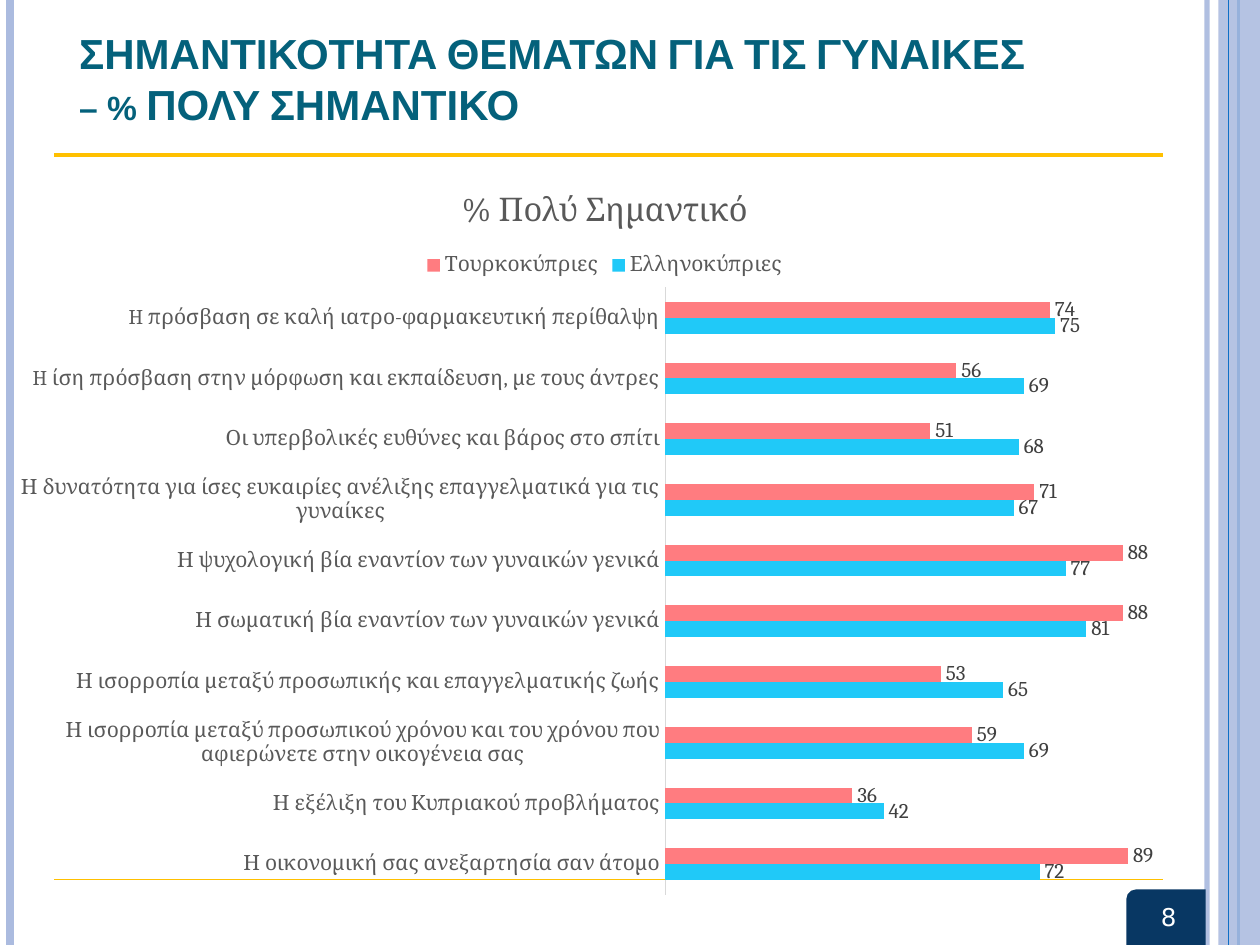
import pptx
import pptx.chart.data
import pptx.dml.color
import pptx.enum.chart
import pptx.enum.shapes
import pptx.enum.text
import pptx.oxml
import pptx.oxml.ns
import pptx.util
from lxml import etree

Inches = pptx.util.Inches
Pt = pptx.util.Pt
qn = pptx.oxml.ns.qn
SHAPES = pptx.enum.shapes.MSO_SHAPE
ANCHOR = pptx.enum.text.MSO_ANCHOR
ALIGN = pptx.enum.text.PP_ALIGN

PALE, BLUE, NAVY, GOLD = "ABBBDF", "0F6FC6", "083763", "FFC000"
TEAL, GREY, DARK, WHITE = "04617B", "595959", "404040", "FFFFFF"

ISSUES = [
    ("Η οικονομική σας ανεξαρτησία σαν άτομο", 72, 89),
    ("Η εξέλιξη του Κυπριακού προβλήματος", 42, 36),
    ("Η ισορροπία μεταξύ προσωπικού χρόνου και του χρόνου που αφιερώνετε στην οικογένεια σας", 69, 59),
    ("Η ισορροπία μεταξύ προσωπικής και επαγγελματικής ζωής", 65, 53),
    ("Η σωματική βία εναντίον των γυναικών γενικά", 81, 88),
    ("Η ψυχολογική βία εναντίον των γυναικών γενικά", 77, 88),
    ("Η δυνατότητα για ίσες ευκαιρίες ανέλιξης επαγγελματικά για τις γυναίκες", 67, 71),
    ("Οι υπερβολικές ευθύνες και βάρος στο σπίτι", 68, 51),
    ("H ίση πρόσβαση στην μόρφωση και εκπαίδευση, με τους άντρες", 69, 56),
    ("H πρόσβαση σε καλή ιατρο-φαρμακευτική περίθαλψη", 75, 74),
]
GROUPS = [("Ελληνοκύπριες", "20C9F8"), ("Τουρκοκύπριες", "FF7C80")]


def rgb(hex_code):
    return pptx.dml.color.RGBColor.from_string(hex_code)


def set_opacity(element, percent):
    colour = next(element.iter(qn("a:srgbClr")))
    etree.SubElement(colour, qn("a:alpha")).set("val", str(percent * 1000))


def style_font(font, size, colour, face="Cambria", bold=False):
    font.size = Pt(size)
    font.name = face
    font.bold = bold
    font.color.rgb = rgb(colour)


class SlideBuilder:
    def __init__(self, slide):
        self.slide = slide
        self.shapes = slide.shapes

    def line(self, x1, y1, x2, y2, colour, width, opacity=None):
        rule = self.shapes.add_connector(
            pptx.enum.shapes.MSO_CONNECTOR.STRAIGHT,
            Inches(x1), Inches(y1), Inches(x2), Inches(y2))
        rule.line.color.rgb = rgb(colour)
        rule.line.width = Pt(width)
        properties = rule._element.spPr
        if opacity:
            set_opacity(properties, opacity)
        etree.SubElement(properties, qn("a:effectLst"))

    def block(self, kind, box, colour, opacity=None, flip=False):
        panel = self.shapes.add_shape(kind, *map(Inches, box))
        panel.shadow.inherit = False
        panel.fill.solid()
        panel.fill.fore_color.rgb = rgb(colour)
        panel.line.fill.background()
        properties = panel._element.spPr
        if opacity:
            set_opacity(properties, opacity)
        if flip:
            properties.find(qn("a:xfrm")).set("flipH", "1")

    def text(self, box, lines, size, colour, face, anchor, align=ALIGN.LEFT,
             bold=False, small_caps=False):
        frame = self.shapes.add_textbox(*map(Inches, box)).text_frame
        frame.word_wrap = True
        frame.vertical_anchor = anchor
        paragraph = frame.paragraphs[0]
        paragraph.alignment = align
        for index, wording in enumerate(lines):
            if index:
                paragraph.add_line_break()
            run = paragraph.add_run()
            run.text = wording
            style_font(run.font, size, colour, face, bold)
            if small_caps:
                run.font._element.set("cap", "small")

    def bar_chart(self, box, heading, rows, groups, plot_layout):
        figures = pptx.chart.data.CategoryChartData(number_format="0")
        figures.categories = [row[0] for row in rows]
        for column, (name, _) in enumerate(groups, 1):
            figures.add_series(name, [row[column] for row in rows])
        chart = self.shapes.add_chart(
            pptx.enum.chart.XL_CHART_TYPE.BAR_CLUSTERED,
            *map(Inches, box), figures).chart
        style_font(chart.font, 10, "000000")

        title = chart.chart_title
        run = title.text_frame.paragraphs[0].add_run()
        run.text = heading
        style_font(run.font, 18.6, GREY)
        title.include_in_layout = False

        chart.has_legend = True
        chart.legend.position = pptx.enum.chart.XL_LEGEND_POSITION.TOP
        chart.legend.include_in_layout = False
        style_font(chart.legend.font, 12, GREY)

        issues = chart.category_axis
        issues.major_tick_mark = pptx.enum.chart.XL_TICK_MARK.NONE
        issues.format.line.color.rgb = rgb("D9D9D9")
        issues.format.line.width = Pt(0.75)
        style_font(issues.tick_labels.font, 12, GREY)

        percent = chart.value_axis
        percent.minimum_scale, percent.maximum_scale = 0, 100
        percent.has_major_gridlines = False
        percent.visible = False

        plot = chart.plots[0]
        plot.gap_width = 182
        plot.overlap = 0
        plot.vary_by_categories = False
        for series, (_, colour) in zip(plot.series, groups):
            series.format.fill.solid()
            series.format.fill.fore_color.rgb = rgb(colour)
            labels = series.data_labels
            labels.show_value = True
            labels.number_format = "0"
            labels.number_format_is_linked = False
            labels.position = pptx.enum.chart.XL_LABEL_POSITION.OUTSIDE_END
            style_font(labels.font, 12, DARK)
        self.place_plot(chart, plot_layout)

    def place_plot(self, chart, fractions):
        area = chart._chartSpace.chart.plotArea
        layout = area.find(qn("c:layout"))
        if layout is None:
            layout = etree.Element(qn("c:layout"))
            area.insert(0, layout)
        manual = etree.SubElement(layout, qn("c:manualLayout"))
        settings = [("layoutTarget", "inner"), ("xMode", "edge"), ("yMode", "edge")]
        for tag, setting in settings + list(zip("xywh", fractions)):
            etree.SubElement(manual, qn("c:" + tag)).set("val", str(setting))


def main():
    deck = pptx.Presentation()
    deck.slide_width, deck.slide_height = Inches(10), Inches(7.5)
    page = SlideBuilder(deck.slides.add_slide(deck.slide_layouts[6]))

    page.line(9.58, 0, 9.58, 7.5, PALE, 3, opacity=93)
    page.line(0.08, 0, 0.08, 7.5, PALE, 4.5)
    page.line(9.83, 0, 9.83, 7.5, BLUE, 1.5)
    page.block(SHAPES.RECTANGLE, (9.67, 0, 0.33, 7.5), PALE, opacity=87)
    page.line(9.75, 0, 9.75, 7.5, BLUE, 0.75)
    page.block(SHAPES.ROUND_1_RECTANGLE, (8.94, 7.06, 0.63, 0.44), NAVY, flip=True)

    page.text((0.53, 0.49, 8.74, 0.58),
              ["ΣΗΜΑΝΤΙΚΟΤΗΤΑ ΘΕΜΑΤΩΝ ΓΙΑ ΤΙΣ ΓΥΝΑΙΚΕΣ", "– % ΠΟΛΥ ΣΗΜΑΝΤΙΚΟ"],
              24, TEAL, "Arial", ANCHOR.BOTTOM, bold=True, small_caps=True)
    page.text((8.94, 6.94, 0.67, 0.67), ["8"], 14, WHITE, "DejaVu Sans",
              ANCHOR.MIDDLE, ALIGN.CENTER)
    page.line(0.43, 1.23, 9.23, 1.23, GOLD, 2.25)
    page.line(0.43, 6.98, 9.23, 6.98, GOLD, 1)
    page.bar_chart((0, 1.27, 9.6, 5.95), "% Πολύ Σημαντικό", ISSUES, GROUPS,
                   (0.55, 0.17, 0.43, 0.81))
    deck.save("out.pptx")


if __name__ == "__main__":
    main()
